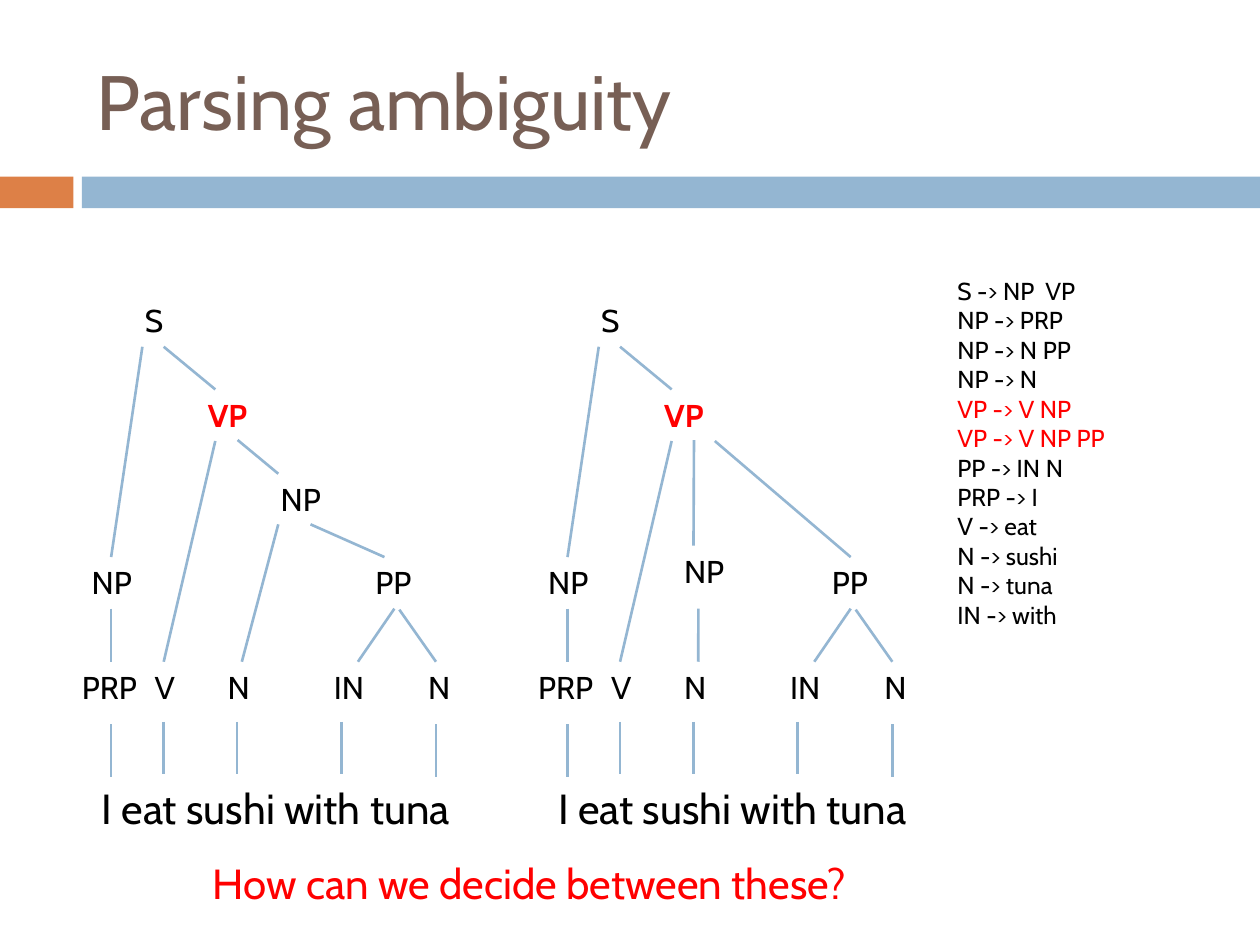
import pptx
import pptx.dml.color
import pptx.enum.shapes
import pptx.enum.text
import pptx.util
from lxml import etree
from pptx.util import Cm

BLUE, ORANGE, BROWN = "94B6D2", "DD8047", "775F55"
BLACK, RED = "000000", "FF0000"
TOP, BOTTOM = 0, 2
NS = "http://schemas.openxmlformats.org/drawingml/2006/main"


def rgb(value):
    return pptx.dml.color.RGBColor.from_string(value)


class Deck:
    font = "Cabin"
    line_width = 1.5

    def __init__(self, width, height):
        self.prs = pptx.Presentation()
        self.prs.slide_width, self.prs.slide_height = Cm(width), Cm(height)
        self.s = self.prs.slides.add_slide(self.prs.slide_layouts[6])

    def bar(self, x, y, w, h, color):
        sp = self.s.shapes.add_shape(pptx.enum.shapes.MSO_SHAPE.RECTANGLE,
                                     Cm(x), Cm(y), Cm(w), Cm(h))
        sp.shadow.inherit = False
        sp.fill.solid()
        sp.fill.fore_color.rgb = rgb(color)
        sp.line.fill.background()

    def text(self, x, y, w, h, text, size, color=BLACK, bold=False, middle=False):
        sp = self.s.shapes.add_textbox(Cm(x), Cm(y), Cm(w), Cm(h))
        tf = sp.text_frame
        tf.word_wrap = True
        if middle:
            tf.vertical_anchor = pptx.enum.text.MSO_ANCHOR.MIDDLE
        tf.text = text
        for p in tf.paragraphs:
            for r in p.runs:
                r.font.name = self.font
                r.font.size = pptx.util.Pt(size)
                r.font.bold = bold
                r.font.color.rgb = rgb(color)
        return sp

    def line(self, start, end):
        """Each end is (x, y) in cm, or (box, site) to join a box."""
        def point(target):
            box, site = target
            if isinstance(box, (int, float)):
                return Cm(box), Cm(site)
            return box.left + box.width // 2, box.top + (box.height if site == BOTTOM else 0)

        c = self.s.shapes.add_connector(pptx.enum.shapes.MSO_CONNECTOR.STRAIGHT,
                                        *point(start), *point(end))
        for target, connect in ((start, c.begin_connect), (end, c.end_connect)):
            if not isinstance(target[0], (int, float)):
                connect(*target)
        c.line.color.rgb = rgb(BLUE)
        c.line.width = pptx.util.Pt(self.line_width)
        etree.SubElement(c._element.spPr, "{%s}effectLst" % NS)

    def tree(self, dx, nodes, branches):
        """Draw labelled nodes and the branches between them, moved right by dx."""
        boxes = {}
        for key, (x, y, w) in nodes.items():
            label = key.split("-")[0]
            head = label == "VP"
            boxes[key] = self.text(x + dx, y, w, 1.02, label, 18,
                                   RED if head else BLACK, head)
        for ends in branches:
            self.line(*[(boxes[a], b) if isinstance(a, str) else (a + dx, b)
                        for a, b in ends])


# Nodes: left, top, width; a suffix tells apart nodes that share a label
WORD_Y = 13.34
NODES = {
    "S": (2.67, 5.94, 1.7), "VP": (3.94, 7.85, 1.7),
    "NP-subject": (1.6, 11.23, 2.74), "PP": (7.32, 11.23, 1.9),
    "PRP": (1.4, WORD_Y, 2.34), "V": (2.87, WORD_Y, 2.74),
    "N-sushi": (4.34, WORD_Y, 1.07), "IN": (6.48, WORD_Y, 1.47),
    "N-tuna": (8.38, WORD_Y, 1.47),
}
BRANCHES = [
    ((2.24, 11.23), (2.87, 6.99)),
    ((4.34, 7.85), (3.3, 6.99)),
    ((3.3, WORD_Y), (4.34, 8.89)),
    ((2.24, 12.27), (2.24, WORD_Y)),
    (("IN", TOP), (7.95, 12.27)),
    ((8.79, WORD_Y), (8.05, 12.29)),
]
# Short lines from the word classes down to the words
BRANCHES += [((x, y), (x, y + 1.06)) for x, y in
             ((2.24, 14.6), (3.3, 14.55), (4.78, 14.55), (6.88, 14.55), (8.79, 14.6))]

# The object phrase and its branches differ between the two readings
READINGS = [
    (0, (5.41, 9.55, 1.7), [
        (("N-sushi", TOP), (5.61, 10.57)),
        ((7.75, 11.23), ("NP-object", BOTTOM)),
        ((5.61, 9.55), ("VP", BOTTOM)),
    ]),
    (9.2, (4.34, 11, 1.7), [
        (("N-sushi", TOP), (4.88, 12.27)),
        ((4.78, 11), ("VP", BOTTOM)),
        ((7.95, 11.23), (5.21, 8.89)),
    ]),
]

# Grammar in blocks of one colour; blocks share one text box
RULES = ["S -> NP  VP", "NP -> PRP", "NP -> N PP", "NP -> N", "VP -> V NP",
         "VP -> V NP PP", "PP -> IN N", "PRP -> I", "V -> eat", "N -> sushi",
         "N -> tuna", "IN -> with"]


def main():
    deck = Deck(25.4, 19.05)

    # Title and bars
    deck.bar(0, 3.56, 1.48, 0.64, ORANGE)
    deck.bar(1.65, 3.56, 23.75, 0.64, BLUE)
    deck.text(1.7, 0.64, 22.66, 2.74, "Parsing ambiguity", 44, BROWN, middle=True)

    # The two parse trees
    for dx, np_object, branches in READINGS:
        deck.text(1.8 + dx, 15.65, 10.36, 1.27, "I eat sushi with tuna", 24)
        deck.tree(dx, {**NODES, "NP-object": np_object}, BRANCHES + branches)

    # Grammar rules, with the competing VP rules in red
    rules = deck.text(19.05, 5.44, 5.82, 7.44, "\n".join(RULES), 14)
    for p in rules.text_frame.paragraphs:
        if p.text.startswith("VP"):
            p.runs[0].font.color.rgb = rgb(RED)

    # Closing question
    deck.text(4.04, 17.17, 19.89, 1.27, "How can we decide between these?", 24, RED)

    deck.prs.save("out.pptx")


if __name__ == "__main__":
    main()
